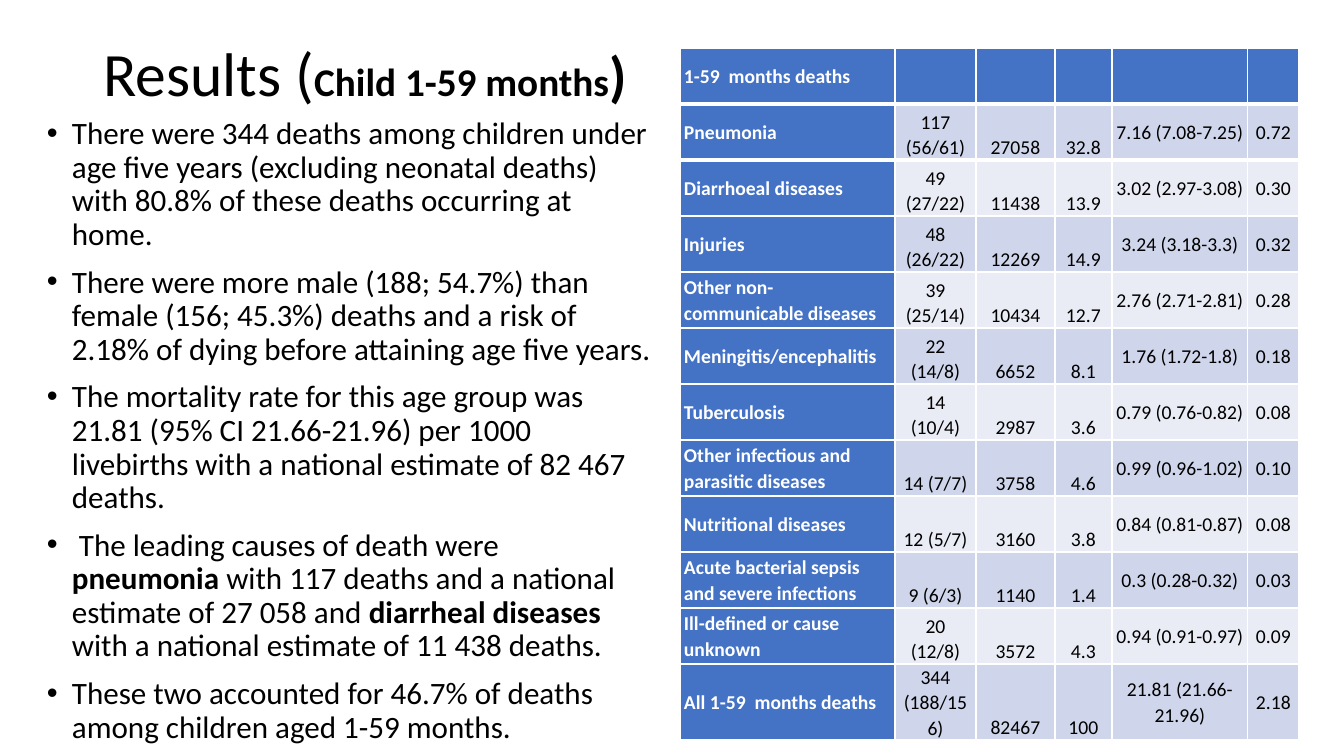
"""Build the slide on causes of death among children aged 1-59 months."""
from lxml import etree
from pptx import Presentation
from pptx import util as u
from pptx.dml.color import RGBColor
from pptx.enum import text
from pptx.oxml.ns import qn

PX = 9071
FONT = "Calibri"


def box(*lengths):
    return [u.Emu(length * PX) for length in lengths]


def style(font, size, color, bold=None):
    font.name = FONT
    font.size = u.Pt(size)
    font.bold = bold
    font.color.rgb = RGBColor.from_string(color)


presentation = Presentation()
presentation.slide_width, presentation.slide_height = box(1344, 756)
slide = presentation.slides.add_slide(presentation.slide_layouts[5])

title = slide.shapes.title
title.left, title.top, title.width, title.height = box(93, 40, 1159, 146)
title_frame = title.text_frame
title_frame.auto_size = text.MSO_AUTO_SIZE.NONE
title_frame.vertical_anchor = text.MSO_ANCHOR.TOP
title_frame.margin_top = u.Emu(3 * PX)
paragraph = title_frame.paragraphs[0]
paragraph.alignment = text.PP_ALIGN.LEFT
paragraph.line_spacing = 0.9
for wording, size, bold in [("Results (", 44, False), ("Child 1-59 months", 28, True), (")", 40, True)]:
    run = paragraph.add_run()
    run.text = wording
    style(run.font, size, "000000", bold)

findings = [
    ["There were 344 deaths among children under age five years (excluding neonatal deaths) "
     "with 80.8% of these deaths occurring at home."],
    ["There were more male (188; 54.7%) than female (156; 45.3%) deaths and a risk of 2.18% "
     "of dying before attaining age five years."],
    ["The mortality rate for this age group was 21.81 (95% CI 21.66-21.96) per 1000 livebirths "
     "with a national estimate of 82 467 deaths."],
    [" The leading causes of death were ", "pneumonia",
     " with 117 deaths and a national estimate of 27 058 and ", "diarrheal diseases ",
     "with a national estimate of 11 438 deaths."],
    ["These two accounted for 46.7% of deaths among children aged 1-59 months."],
]
findings_frame = slide.shapes.add_textbox(*box(37, 113, 626, 626)).text_frame
findings_frame.word_wrap = True
for index, parts in enumerate(findings):
    paragraph = findings_frame.add_paragraph() if index else findings_frame.paragraphs[0]
    paragraph.line_spacing = 0.9
    paragraph.space_before = u.Pt(10)
    style(paragraph.font, 22.2, "000000")
    for position, wording in enumerate(parts):
        run = paragraph.add_run()
        run.text = wording
        style(run.font, 22.2, "000000", position % 2 == 1)
    properties = paragraph._p.get_or_add_pPr()
    properties.set("marL", str(25 * PX))
    properties.set("indent", str(-25 * PX))
    bullet_font = etree.Element(qn("a:buFont"), typeface="Arial")
    bullet = etree.Element(qn("a:buChar"), char="•")
    properties.find(qn("a:spcBef")).addnext(bullet_font)
    bullet_font.addnext(bullet)

causes = [
    ["1-59  months deaths", "", "", "", "", ""],
    ["Pneumonia", "117 (56/61)", "27058", "32.8", "7.16 (7.08-7.25)", "0.72"],
    ["Diarrhoeal diseases", "49 (27/22)", "11438", "13.9", "3.02 (2.97-3.08)", "0.30"],
    ["Injuries", "48 (26/22)", "12269", "14.9", "3.24 (3.18-3.3)", "0.32"],
    ["Other non-communicable diseases", "39 (25/14)", "10434", "12.7", "2.76 (2.71-2.81)", "0.28"],
    ["Meningitis/encephalitis", "22 (14/8)", "6652", "8.1", "1.76 (1.72-1.8)", "0.18"],
    ["Tuberculosis", "14 (10/4)", "2987", "3.6", "0.79 (0.76-0.82)", "0.08"],
    ["Other infectious and parasitic diseases", "14 (7/7)", "3758", "4.6", "0.99 (0.96-1.02)", "0.10"],
    ["Nutritional diseases", "12 (5/7)", "3160", "3.8", "0.84 (0.81-0.87)", "0.08"],
    ["Acute bacterial sepsis and severe infections", "9 (6/3)", "1140", "1.4", "0.3 (0.28-0.32)", "0.03"],
    ["Ill-defined or cause unknown", "20 (12/8)", "3572", "4.3", "0.94 (0.91-0.97)", "0.09"],
    ["All 1-59  months deaths", "344 (188/156)", "82467", "100", "21.81 (21.66-21.96)", "2.18"],
]
widths = [215, 81, 79, 57, 136, 51]
table = slide.shapes.add_table(len(causes), len(widths), *box(680, 48, sum(widths), 674)).table
table.first_col = True
for column, width in zip(table.columns, box(*widths)):
    column.width = width
for row_index, values in enumerate(causes):
    table.rows[row_index].height = u.Emu((58 if row_index == len(causes) - 1 else 56) * PX)
    for column_index, value in enumerate(values):
        cell = table.cell(row_index, column_index)
        heading = row_index == 0 or column_index == 0
        band = "CFD5EA" if row_index % 2 else "E9EBF5"
        cell.fill.solid()
        cell.fill.fore_color.rgb = RGBColor.from_string("4472C4" if heading else band)
        cell.margin_left = cell.margin_right = u.Emu(4 * PX)
        cell.margin_top = cell.margin_bottom = 0
        bottom = column_index in (1, 2, 3)
        cell.vertical_anchor = text.MSO_ANCHOR.BOTTOM if bottom else text.MSO_ANCHOR.MIDDLE
        cell.text = value
        paragraph = cell.text_frame.paragraphs[0]
        paragraph.line_spacing = 1.07
        paragraph.alignment = text.PP_ALIGN.CENTER if column_index else text.PP_ALIGN.LEFT
        style(paragraph.font, 14, "FFFFFF" if heading else "000000", heading)
        if row_index < 2:
            side = "a:lnT" if row_index else "a:lnB"
            border = etree.Element(qn(side), w=str(u.Pt(3)))
            border_fill = etree.SubElement(border, qn("a:solidFill"))
            etree.SubElement(border_fill, qn("a:srgbClr"), val="FFFFFF")
            cell._tc.get_or_add_tcPr().insert(0, border)

presentation.save("out.pptx")
